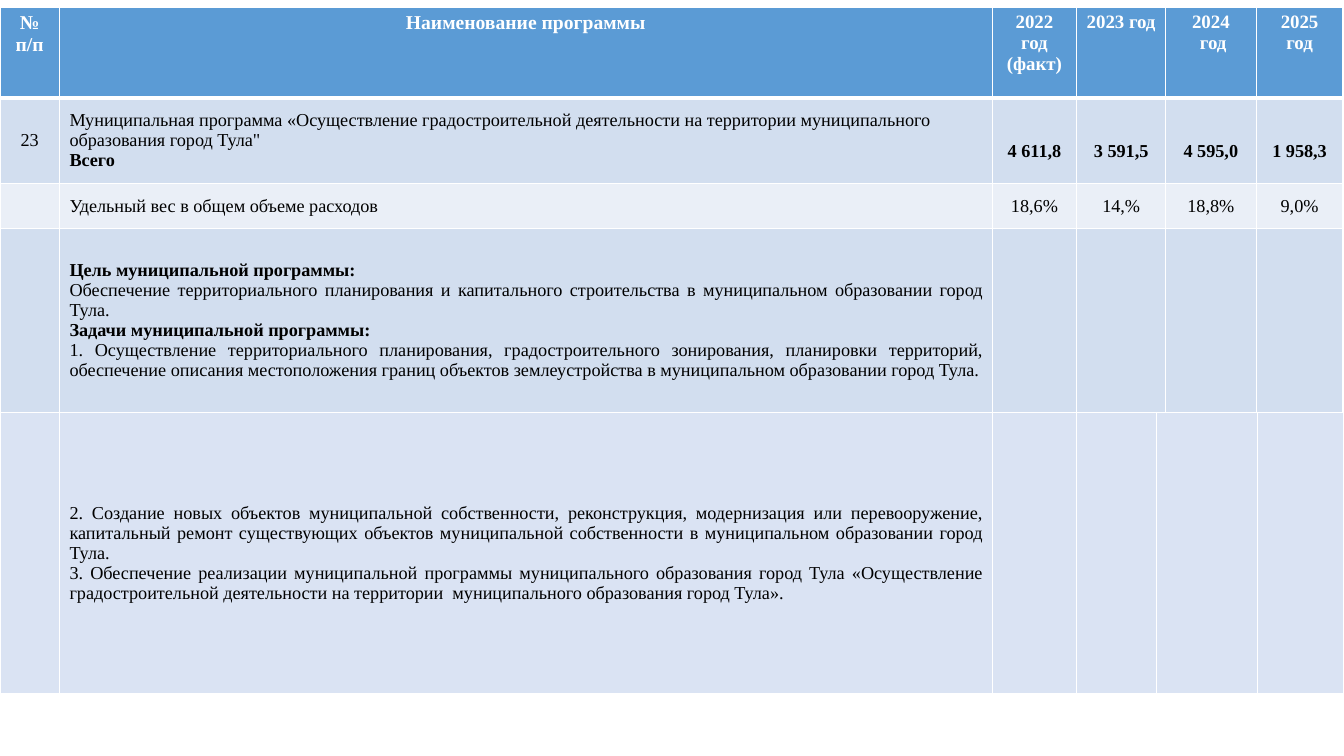
from lxml.etree import SubElement as Sub
from pptx import Presentation
from pptx.dml.color import RGBColor as Rgb
from pptx.enum.text import MSO_ANCHOR as Anchor, PP_ALIGN as Align
from pptx.oxml.ns import qn
from pptx.util import Inches as In, Pt

HUES = {"head": "5B9BD5", "band": "D2DEEF", "pale": "EAEFF7",
        "goal": "DAE3F3", "white": "FFFFFF", "black": "000000"}
FONT = "Times New Roman"
WIDE, HIGH = 13.33, 7.5
LEFT, MID, JUST = Align.LEFT, Align.CENTER, Align.JUSTIFY
LINE = 0.21  # height of one text line

HEADS = [["№ п/п"], ["Наименование программы"], ["2022 год (факт)"],
         ["2023 год"], ["2024", " год"], ["2025", "год"]]
NAME = ("Муниципальная программа «Осуществление градостроительной деятельности "
        "на территории муниципального образования город Тула\"")
SUMS = ["4 611,8", "3 591,5", "4 595,0", "1 958,3"]
SHARES = ["18,6%", "14,%", "18,8%", "9,0%"]
AIMS = [
    ("Цель муниципальной программы: ", True),
    ("Обеспечение территориального планирования и капитального строительства "
     "в муниципальном образовании город Тула.", False),
    ("Задачи муниципальной программы:", True),
    ("1. Осуществление территориального планирования, градостроительного "
     "зонирования, планировки территорий, обеспечение описания местоположения "
     "границ объектов землеустройства в муниципальном образовании город Тула.",
     False),
]
TASKS = [
    ("2. Создание новых объектов муниципальной собственности, реконструкция, "
     "модернизация или перевооружение, капитальный ремонт существующих объектов "
     "муниципальной собственности в муниципальном образовании город Тула.", False),
    ("3. Обеспечение реализации муниципальной программы муниципального "
     "образования город Тула «Осуществление градостроительной деятельности "
     "на территории  муниципального образования город Тула».", False),
]


def add_grid(slide, top, cols, rows):
    frame = slide.shapes.add_table(len(rows), len(cols), 0, In(top),
                                   In(WIDE), In(sum(rows)))
    grid = frame.table
    grid.first_row = grid.horz_banding = False
    for col, size in zip(grid.columns, cols):
        col.width = In(size)
    for row, size in zip(grid.rows, rows):
        row.height = In(size)
    return grid


def dress(cell, hue, base=1):
    """Fill a cell and rule its sides, the bottom one base points wide."""
    props = cell._tc.get_or_add_tcPr()
    for side, size in zip("LRTB", (1, 1, 1, base)):
        rule = Sub(props, qn(f"a:ln{side}"), w=str(Pt(size)))
        Sub(Sub(rule, qn("a:solidFill")), qn("a:srgbClr"), val=HUES["white"])
    cell.fill.solid()
    cell.fill.fore_color.rgb = Rgb.from_string(HUES[hue])


def write(cell, lines, align, size=13, hue="black"):
    """Write (text, bold) pairs, one to a paragraph."""
    frame = cell.text_frame
    for i, (text, bold) in enumerate(lines):
        para = frame.add_paragraph() if i else frame.paragraphs[0]
        para.alignment = align
        run = para.add_run()
        run.text = text
        font = run.font
        font.name, font.size, font.bold = FONT, Pt(size), bold
        font.color.rgb = Rgb.from_string(HUES[hue])


def fill_head(row):
    for i, (cell, words) in enumerate(zip(row.cells, HEADS)):
        dress(cell, "head", 3)
        cell.margin_left = cell.margin_right = In(0.09)
        write(cell, [(word, True) for word in words], MID,
              14 if i < 2 else 13.5, "white")


def fill_row(row, hue, body, align=JUST, mark="", vals=(), bold=False, drop=0):
    """Fill a body row; drop is the extra top margin of its values."""
    for cell in row.cells:
        dress(cell, hue)
        cell.vertical_anchor = Anchor.MIDDLE
    cells = list(row.cells)
    if mark:
        write(cells[0], [(mark, False)], MID)
    write(cells[1], body, align)
    for cell, val in zip(cells[2:], vals):
        cell.margin_top = In(0.05 + drop)
        write(cell, [(val, bold)], MID)


def main():
    deck = Presentation()
    deck.slide_width, deck.slide_height = In(WIDE), In(HIGH)
    slide = deck.slides.add_slide(deck.slide_layouts[6])

    rows = add_grid(slide, 0.07, [0.59, 9.25, 0.84, 0.88, 0.9, 0.86],
                    [0.9, 0.85, 0.45, 1.82]).rows
    fill_head(rows[0])
    fill_row(rows[1], "band", [(NAME, False), ("Всего", True)], LEFT,
             "23", SUMS, True, LINE)
    fill_row(rows[2], "pale", [("Удельный вес в общем объеме расходов", False)],
             vals=SHARES)
    fill_row(rows[3], "band", AIMS)

    rest = add_grid(slide, 4.09, [0.59, 9.25, 0.84, 0.79, 1, 0.86], [2.79])
    fill_row(rest.rows[0], "goal", TASKS)
    deck.save("out.pptx")


if __name__ == "__main__":
    main()
